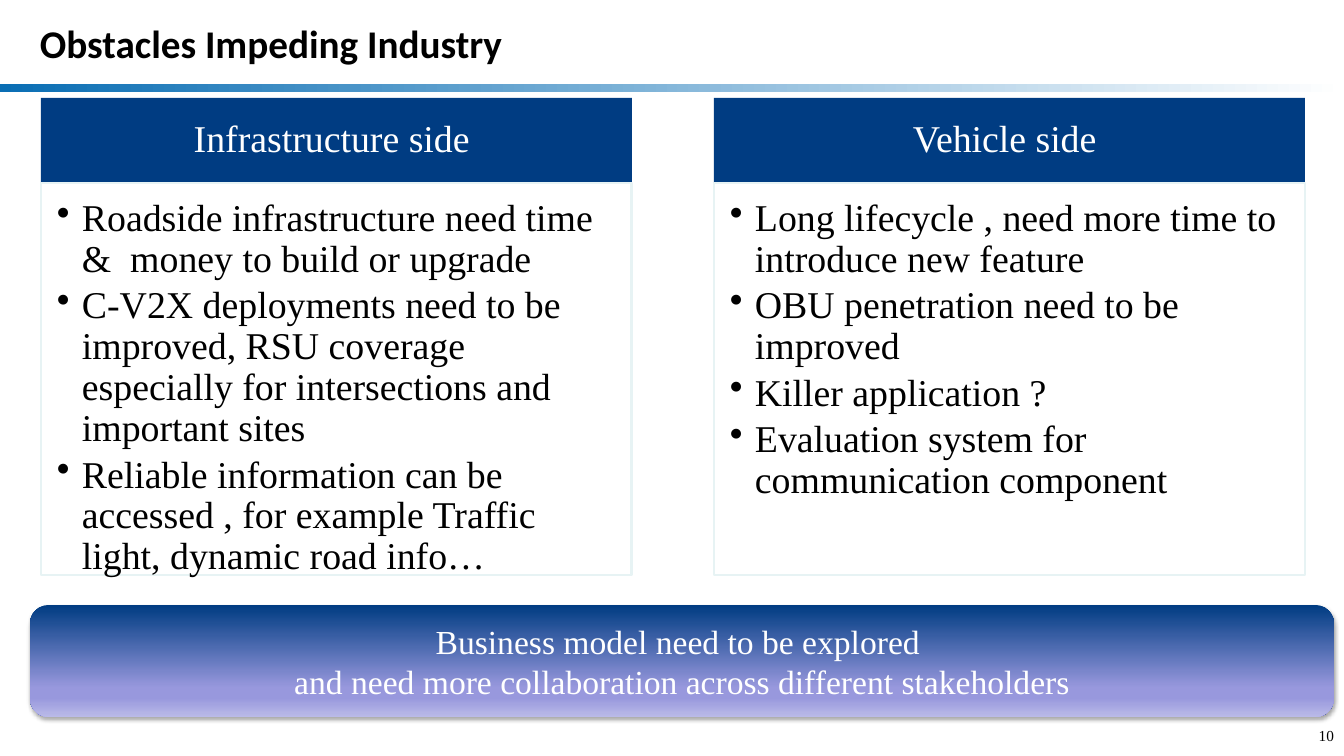
"""Build the slide on obstacles impeding the industry."""
from lxml.etree import SubElement
from pptx import Presentation
from pptx.dml.color import RGBColor
from pptx.enum.shapes import MSO_SHAPE as Shape
from pptx.enum.text import MSO_ANCHOR as Anchor, PP_ALIGN as Align
from pptx.oxml.ns import qn
from pptx.util import Pt

TITLE = "Obstacles Impeding Industry"
PAGE_NUMBER = "10"
COLUMNS = [
    ("Infrastructure side ", [
        "Roadside infrastructure need time &  money to build or upgrade",
        "C-V2X deployments need to be improved, RSU coverage especially for intersections and important sites",
        "Reliable information can be accessed , for example Traffic light, dynamic road info…",
    ]),
    ("Vehicle side ", [
        "Long lifecycle , need more time to introduce new feature",
        "OBU penetration need to be improved",
        "Killer application ?",
        "Evaluation system for communication component",
    ]),
]
CONCLUSION = [
    "Business model need to be explored ",
    "and need more collaboration across different stakeholders",
]

BLACK = RGBColor(0x00, 0x00, 0x00)
WHITE = RGBColor(0xFF, 0xFF, 0xFF)
NAVY = RGBColor(0x00, 0x3C, 0x82)
BLUE = RGBColor(0x0A, 0x6E, 0xB4)
LILAC = RGBColor(0x98, 0x98, 0xDD)
PALE_LILAC = RGBColor(0xBA, 0xBA, 0xE8)
MINT = RGBColor(0xE7, 0xF3, 0xF4)
SERIF = "Times New Roman"

WIDTH, HEIGHT = 1344, 756
COLUMN_LEFT, COLUMN_STEP, COLUMN_WIDTH = 41, 673, 591
HEADER_TOP, HEADER_HEIGHT, BODY_HEIGHT = 98, 85, 392
HEADER_INSETS = (21, 12, 21, 12)
BODY_INSETS = (16, 16, 21, 24)
DEFAULT_INSETS = (10, 5, 10, 5)
BULLET_INDENT = 25


def px(length):
    return round(length * 914400 / 100.8)


def add_box(slide, kind, left, top, width, height):
    box = slide.shapes.add_shape(kind, px(left), px(top), px(width), px(height))
    box.shadow.inherit = False
    box.fill.background()
    box.line.fill.background()
    return box


def write(box, lines, size, color, font=SERIF, align=Align.LEFT,
          anchor=Anchor.TOP, insets=DEFAULT_INSETS, bold=False):
    frame = box.text_frame
    frame.word_wrap = True
    frame.vertical_anchor = anchor
    (frame.margin_left, frame.margin_top,
     frame.margin_right, frame.margin_bottom) = map(px, insets)
    frame.text = "\n".join(lines)
    for para in frame.paragraphs:
        para.alignment = align
        for span in para.runs:
            span.font.name = font
            span.font.size = Pt(size)
            span.font.bold = bold
            span.font.color.rgb = color
    return frame.paragraphs


def add_color(parent, color, alpha=100):
    node = SubElement(parent, qn("a:srgbClr"), val=str(color))
    if alpha < 100:
        SubElement(node, qn("a:alpha"), val=str(alpha * 1000))


def set_gradient(box, stops, angle):
    box.fill.gradient()
    box.fill.gradient_angle = angle
    stop_list = box.fill._fill._gradFill.find(qn("a:gsLst"))
    for stop in list(stop_list):
        stop_list.remove(stop)
    for position, color in stops:
        add_color(SubElement(stop_list, qn("a:gs"), pos=str(position * 1000)), color)


def add_shadow(box):
    effects = box._element.spPr.find(qn("a:effectLst"))
    shadow = SubElement(effects, qn("a:outerShdw"), blurRad=str(Pt(3.1)),
                        dist=str(Pt(1.8)), dir="5400000", rotWithShape="0")
    add_color(shadow, BLACK, 35)


def add_bullet(para):
    properties = para._p.get_or_add_pPr()
    properties.set("marL", str(px(BULLET_INDENT)))
    properties.set("indent", str(-px(BULLET_INDENT)))
    SubElement(properties, qn("a:buChar"), char="•")


def add_column(slide, left, heading, points):
    header = add_box(slide, Shape.RECTANGLE, left, HEADER_TOP, COLUMN_WIDTH, HEADER_HEIGHT)
    header.fill.solid()
    header.fill.fore_color.rgb = NAVY
    for para in write(header, [heading], 27, WHITE, align=Align.CENTER,
                      anchor=Anchor.MIDDLE, insets=HEADER_INSETS):
        para.line_spacing = 0.9

    body = add_box(slide, Shape.RECTANGLE, left, HEADER_TOP + HEADER_HEIGHT,
                   COLUMN_WIDTH, BODY_HEIGHT)
    body.line.color.rgb = MINT
    body.line.width = Pt(2)
    for para in write(body, points, 27, BLACK, insets=BODY_INSETS):
        para.line_spacing = 0.9
        para.space_after = Pt(4)
        add_bullet(para)


def main():
    deck = Presentation()
    deck.slide_width, deck.slide_height = px(WIDTH), px(HEIGHT)
    slide = deck.slides.add_slide(deck.slide_layouts[6])

    page = add_box(slide, Shape.RECTANGLE, 1280, 721, 64, 35)
    write(page, [PAGE_NUMBER], 10.9, BLACK, align=Align.RIGHT)

    rule = add_box(slide, Shape.RECTANGLE, 0, 84, WIDTH, 8)
    set_gradient(rule, [(0, BLUE), (100, WHITE)], 0)

    title = add_box(slide, Shape.RECTANGLE, 30, 1, 1006, 83)
    write(title, [TITLE], 28, BLACK, font="Calibri", anchor=Anchor.MIDDLE, bold=True)

    for index, (heading, points) in enumerate(COLUMNS):
        add_column(slide, COLUMN_LEFT + index * COLUMN_STEP, heading, points)

    banner = add_box(slide, Shape.ROUNDED_RECTANGLE, 30, 605, 1304, 112)
    set_gradient(banner, [(0, NAVY), (74, LILAC), (83, LILAC), (100, PALE_LILAC)], 270)
    add_shadow(banner)
    write(banner, CONCLUSION, 24, WHITE, align=Align.CENTER, anchor=Anchor.MIDDLE)

    deck.save("out.pptx")


if __name__ == "__main__":
    main()
